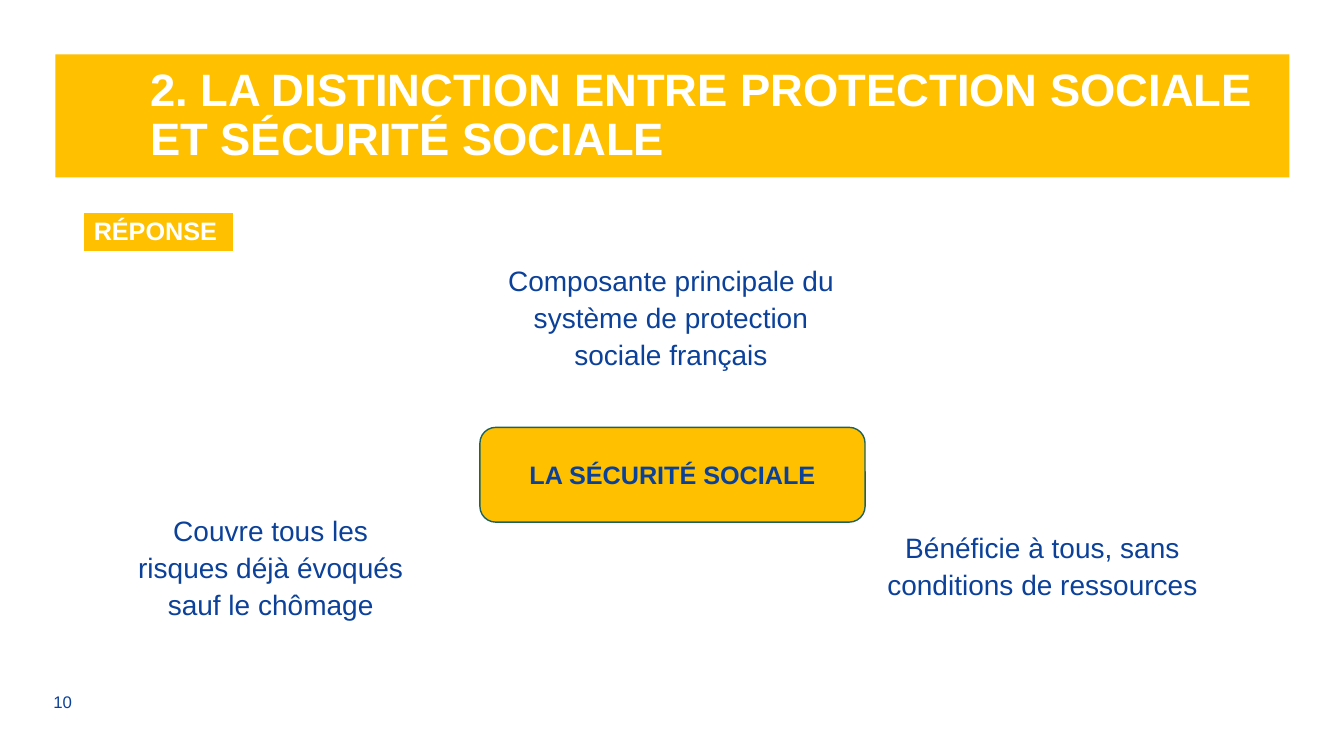
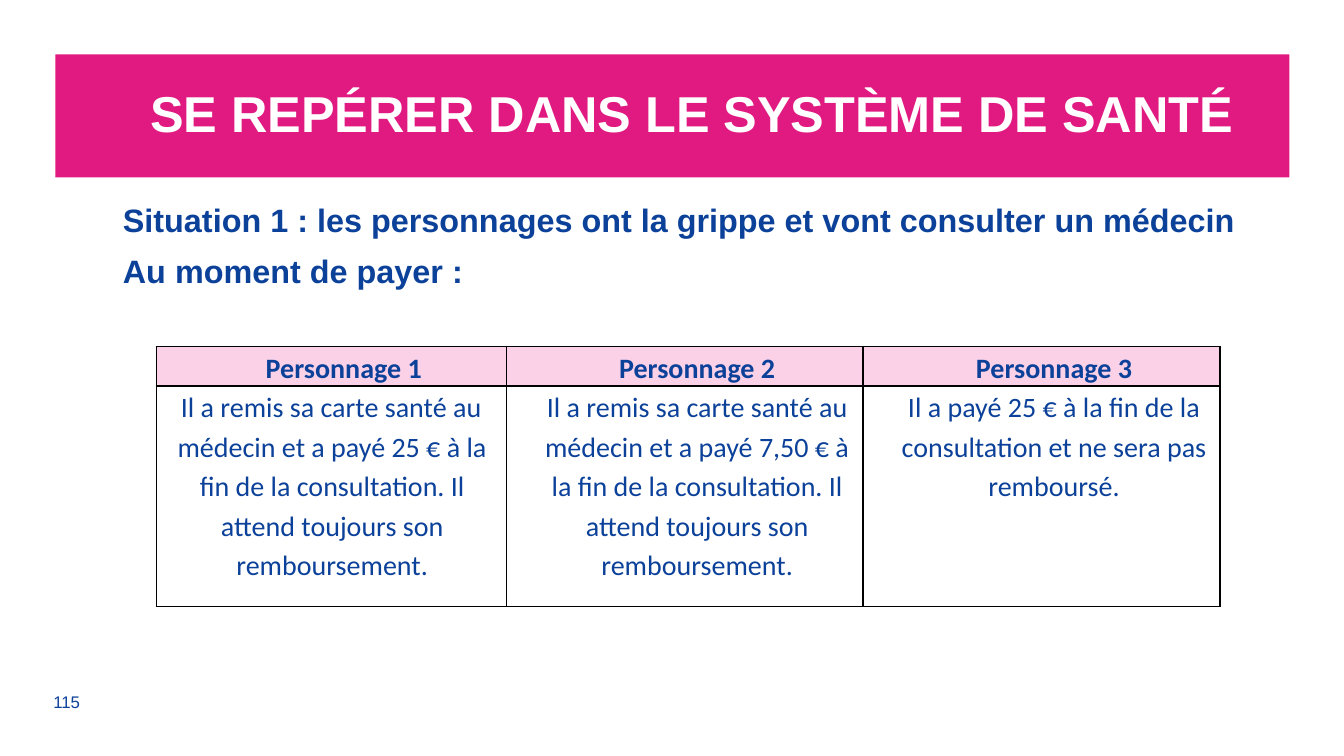
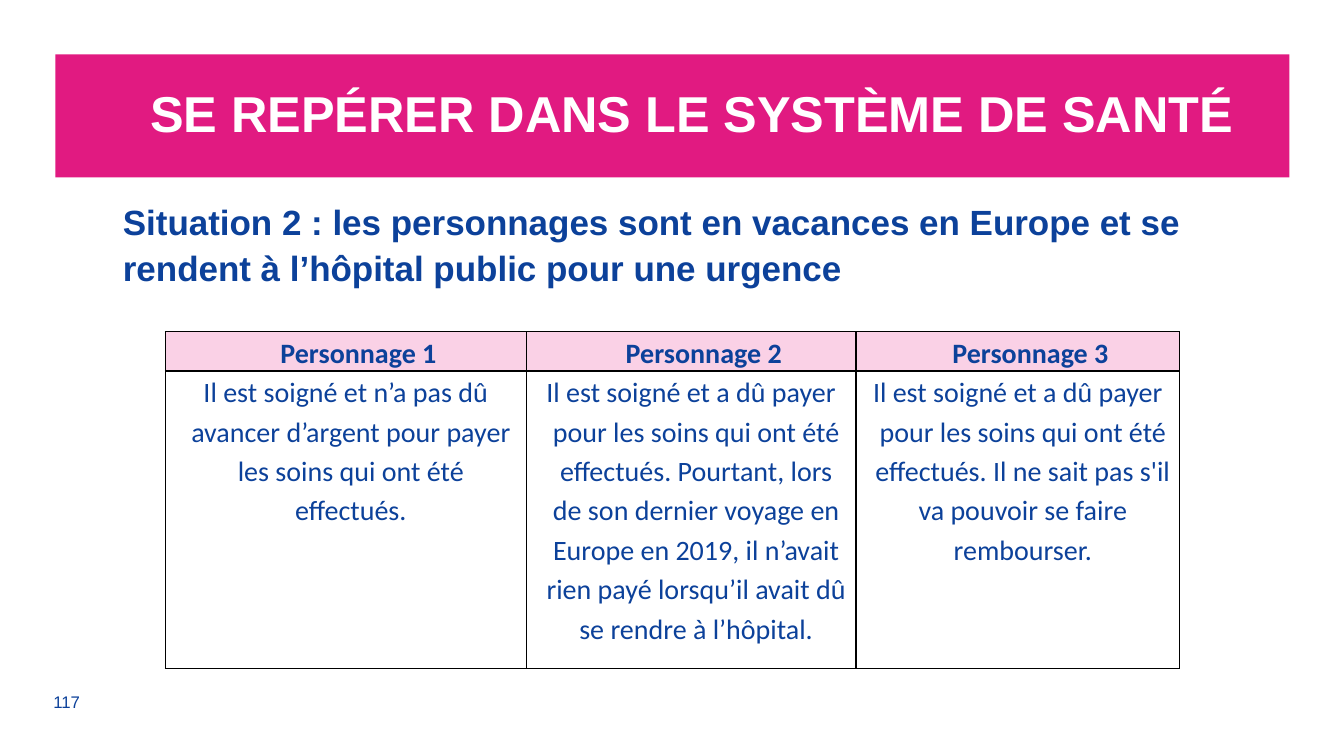
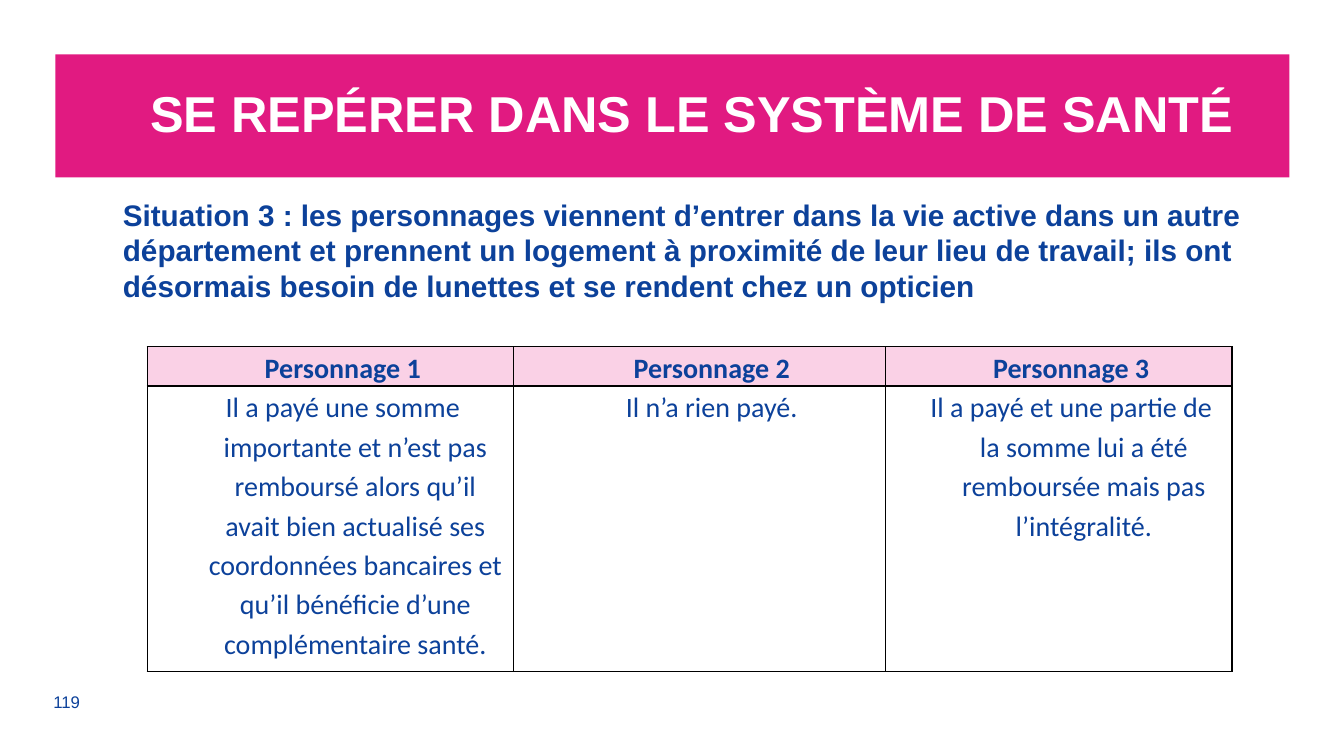
from lxml.etree import SubElement
from pptx import Presentation
from pptx.dml.color import RGBColor
from pptx.enum.shapes import MSO_SHAPE as Shape
from pptx.enum.text import MSO_ANCHOR as Anchor, PP_ALIGN as Align
from pptx.oxml.ns import qn
from pptx.util import Inches, Pt

WHITE = RGBColor(0xFF, 0xFF, 0xFF)
BLACK = RGBColor(0x00, 0x00, 0x00)
BLUE = RGBColor(0x0C, 0x41, 0x9A)
YELLOW = RGBColor(0xFF, 0xC0, 0x00)
PINK = RGBColor(0xE1, 0x1A, 0x81)
PALE_PINK = RGBColor(0xFA, 0xD1, 0xE6)
GREEN = RGBColor(0x1E, 0x62, 0x59)

HEADER_HEIGHT = 0.39
HEADER_INDENT = (0.5, -0.25)
SITUATION_TITLE = "SE REPÉRER DANS LE SYSTÈME DE SANTÉ"


def write(paragraph, text, size, color=BLUE, bold=False, font="Arial", align=Align.LEFT,
          indent=(0, 0), line=1.0, before=0, after=0):
    paragraph.text = text
    paragraph.font.name = font
    paragraph.font.size = Pt(size)
    paragraph.font.bold = bold
    paragraph.font.color.rgb = color
    paragraph.alignment = align
    paragraph.line_spacing = line
    paragraph.space_before = Pt(before)
    paragraph.space_after = Pt(after)
    margin, first_line = indent
    properties = paragraph._p.get_or_add_pPr()
    properties.set("marL", str(Inches(margin)))
    properties.set("indent", str(Inches(first_line)))


def add_text(slide, box, lines, size, anchor=Anchor.TOP, **style):
    frame = slide.shapes.add_textbox(*map(Inches, box)).text_frame
    frame.word_wrap = True
    frame.vertical_anchor = anchor
    for index, text in enumerate(lines):
        paragraph = frame.add_paragraph() if index else frame.paragraphs[0]
        write(paragraph, text, size, **style)


def add_block(slide, kind, box, fill, outline=None):
    block = slide.shapes.add_shape(kind, *map(Inches, box))
    block.shadow.inherit = False
    block.fill.solid()
    block.fill.fore_color.rgb = fill
    if outline:
        block.line.color.rgb = outline
        block.line.width = Pt(1)
    else:
        block.line.fill.background()
    block.text_frame.word_wrap = True
    block.text_frame.vertical_anchor = Anchor.MIDDLE
    return block.text_frame


def add_page(deck, title, size, band_color, number):
    slide = deck.slides.add_slide(deck.slide_layouts[6])
    band = add_block(slide, Shape.RECTANGLE, (0.55, 0.54, 12.24, 1.22), band_color)
    band.margin_left = Inches(0.94)
    band.margin_right = band.margin_top = band.margin_bottom = Inches(0.08)
    write(band.paragraphs[0], title, size, WHITE, bold=True, line=0.9)
    add_text(slide, (0.43, 6.81, 0.79, 0.31), [str(number)], 12, Anchor.MIDDLE)
    return slide


def add_grid(slide, left, top, widths, heights):
    box = (left, top, sum(widths), sum(heights))
    table = slide.shapes.add_table(len(heights), len(widths), *map(Inches, box)).table
    table.first_row = table.horz_banding = False
    for column, width in zip(table.columns, widths):
        column.width = Inches(width)
    for row, height in zip(table.rows, heights):
        row.height = Inches(height)
    return table


def style_cell(cell, fill, border, bottom_width=1):
    properties = cell._tc.get_or_add_tcPr()
    for side in ("lnL", "lnR", "lnT", "lnB"):
        width = bottom_width if side == "lnB" else 1
        edge = SubElement(properties, qn(f"a:{side}"), w=str(Pt(width)))
        paint = SubElement(edge, qn("a:solidFill"))
        SubElement(paint, qn("a:srgbClr"), val=str(border))
    if fill:
        cell.fill.solid()
        cell.fill.fore_color.rgb = fill
    else:
        cell.fill.background()


def write_outcome(cell, text, indent, fill=None, bold=False):
    style_cell(cell, fill, BLACK)
    cell.margin_left = cell.margin_right = Inches(0.07)
    cell.margin_top = cell.margin_bottom = 0
    write(cell.text_frame.paragraphs[0], text, 20, bold=bold, font="Calibri",
          align=Align.CENTER, indent=indent, line=1.15, after=6)


def add_answer_slide(deck):
    slide = add_page(deck, "2.\tLA DISTINCTION ENTRE PROTECTION SOCIALE ET SÉCURITÉ SOCIALE",
                     32.4, YELLOW, 10)
    tag = add_grid(slide, 0.83, 2.11, [1.49], [0.4]).cell(0, 0)
    style_cell(tag, YELLOW, WHITE, bottom_width=3)
    write(tag.text_frame.paragraphs[0], "RÉPONSE", 18, WHITE, bold=True)

    hub = add_block(slide, Shape.ROUNDED_RECTANGLE, (4.76, 4.24, 3.82, 0.94), YELLOW, GREEN)
    write(hub.paragraphs[0], "LA SÉCURITÉ SOCIALE", 18, bold=True, align=Align.CENTER)

    features = [
        ((4.62, 2.53, 3.82, 0.94), "Composante principale du système de protection sociale français"),
        ((8.43, 5.18, 3.57, 0.94), "Bénéficie à tous, sans conditions de ressources"),
        ((0.94, 5.01, 3.24, 1.54), "Couvre tous les risques déjà évoqués sauf le chômage"),
    ]
    for box, text in features:
        add_text(slide, box, [text], 20, align=Align.CENTER, indent=(0.25, 0), line=1.1, before=6)


def add_situation_slide(deck, number, heading, size, corner, widths, height, outcomes, line=1.1):
    slide = add_page(deck, SITUATION_TITLE, 36, PINK, number)
    add_text(slide, (1.12, 1.9, 11.42, 1.39), heading, size, bold=True, line=line, before=6)
    table = add_grid(slide, *corner, widths, [HEADER_HEIGHT, height])
    for column, (text, indent) in enumerate(outcomes):
        write_outcome(table.cell(0, column), f"Personnage {column + 1}", HEADER_INDENT,
                      PALE_PINK, bold=True)
        write_outcome(table.cell(1, column), text, indent)


def main():
    deck = Presentation()
    deck.slide_width = Inches(13.33)
    deck.slide_height = Inches(7.5)

    add_answer_slide(deck)
    add_situation_slide(
        deck, 115,
        ["Situation 1 : les personnages ont la grippe et vont consulter un médecin",
         "Au moment de payer :"],
        23.1, (1.55, 3.44), [3.47, 3.54, 3.54], 2.19,
        [("Il a remis sa carte santé au médecin et a payé 25 € à la fin de la consultation. "
          "Il attend toujours son remboursement.", (0.02, -0.25)),
         ("Il a remis sa carte santé au médecin et a payé 7,50 € à la fin de la consultation. "
          "Il attend toujours son remboursement.", (0.25, 0)),
         ("Il a payé 25 € à la fin de la consultation et ne sera pas remboursé.", (0.25, 0))])
    add_situation_slide(
        deck, 117,
        ["Situation 2 : les personnages sont en vacances en Europe et se rendent "
         "à l’hôpital public pour une urgence"],
        25, (1.64, 3.29), [3.58, 3.27, 3.21], 2.95,
        [("Il est soigné et n’a pas dû avancer d’argent pour payer les soins qui ont été "
          "effectués.", (0.1, -0.25)),
         ("Il est soigné et a dû payer pour les soins qui ont été effectués. Pourtant, lors de "
          "son dernier voyage en Europe en 2019, il n’avait rien payé lorsqu’il avait dû se "
          "rendre à l’hôpital.", (0.1, -0.25)),
         ("Il est soigné et a dû payer pour les soins qui ont été effectués. Il ne sait pas "
          "s'il va pouvoir se faire rembourser.", (0.1, -0.25))])
    add_situation_slide(
        deck, 119,
        ["Situation 3 : les personnages viennent d’entrer dans la vie active dans un autre "
         "département et prennent un logement à proximité de leur lieu de travail; ils ont "
         "désormais besoin de lunettes et se rendent chez un opticien"],
        21.2, (1.46, 3.44), [3.63, 3.69, 3.44], 2.83,
        [("Il a payé une somme importante et n’est pas remboursé alors qu’il avait bien "
          "actualisé ses coordonnées bancaires et qu’il bénéficie d’une complémentaire santé.",
          (0.5, -0.25)),
         ("Il n’a rien payé.", (0.5, -0.25)),
         ("Il a payé et une partie de la somme lui a été remboursée mais pas l’intégralité.",
          (0.5, -0.25))],
        line=1.0)

    deck.save("out.pptx")


if __name__ == "__main__":
    main()
